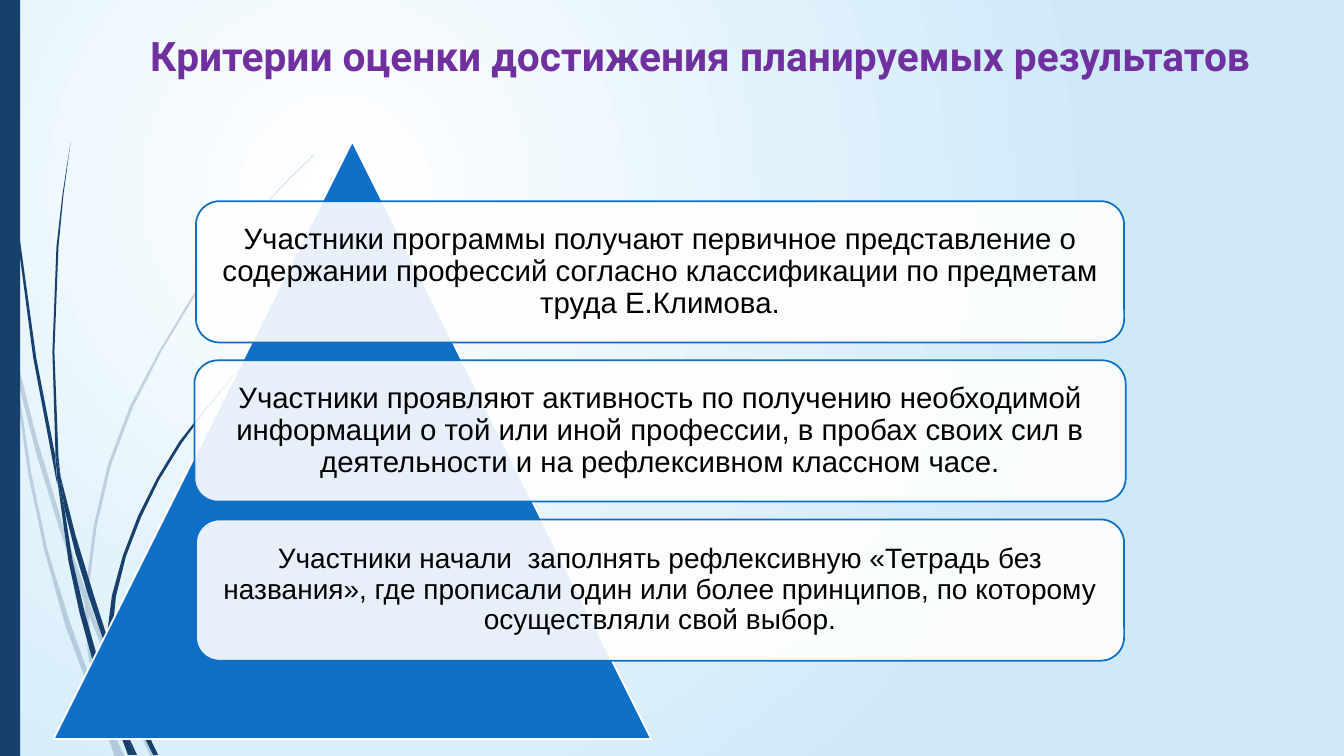
from lxml import etree
from pptx import Presentation
from pptx import util as u
from pptx.dml.color import RGBColor
from pptx.enum import shapes, text
from pptx.oxml.ns import qn

NAVY = RGBColor(0x17, 0x40, 0x6D)
BLUE = RGBColor(0x0F, 0x6F, 0xC6)
PURPLE = RGBColor(0x70, 0x30, 0xA0)
SKY = RGBColor(0xCE, 0xEA, 0xF9)
WHITE = RGBColor(0xFF, 0xFF, 0xFF)
BLACK = RGBColor(0, 0, 0)

TITLE = "Критерии оценки достижения планируемых результатов"
# text, font size, left, width
CARDS = [
    ("Участники программы получают первичное представление о содержании "
     "профессий согласно классификации по предметам труда Е.Климова.",
     21, 4.94, 23.39),
    ("Участники проявляют активность по получению необходимой информации "
     "о той или иной профессии, в пробах своих сил в деятельности "
     "и на рефлексивном классном часе.", 21, 4.9, 23.47),
    ("Участники начали  заполнять рефлексивную «Тетрадь без названия», "
     "где прописали один или более принципов, по которому осуществляли "
     "свой выбор.", 20, 4.94, 23.39),
]
CARD_TOP, CARD_STEP, CARD_HEIGHT = 5.07, 4.01, 3.56

# Outlines of the pieces of grass, corner by corner in GRID units
GRID = u.Cm(0.0254)
PALE_GRASS = [
    [(11, 350), (9, 322), (0, 282), (0, 299), (10, 344)],
    [(58, 522), (84, 599), (85, 586), (62, 520), (36, 433), (14, 345),
     (17, 376), (36, 450)],
    [(92, 607), (88, 596), (88, 610), (123, 694), (150, 751), (155, 751),
     (127, 692)],
    [(119, 751), (124, 751), (105, 711)],
    [(93, 683), (70, 619), (47, 545), (31, 469), (17, 376), (11, 350),
     (28, 470), (44, 546), (65, 621), (92, 693), (101, 714), (99, 707)],
    [(84, 599), (87, 646), (93, 683), (96, 692), (105, 711), (103, 706),
     (91, 646), (88, 610), (88, 608)],
    [(88, 584), (96, 522), (110, 462), (132, 404), (160, 349), (192, 296),
     (229, 245), (268, 198), (290, 175), (312, 154), (312, 153), (289, 175),
     (268, 197), (228, 244), (190, 295), (158, 348), (129, 403), (107, 461),
     (93, 522), (85, 584), (85, 586), (88, 596)],
    [(101, 714), (114, 751), (119, 751)],
    [(88, 608), (88, 610), (88, 596), (85, 586), (84, 599)],
    [(96, 692), (93, 683), (99, 707), (101, 714), (119, 751), (105, 711)],
]
DARK_GRASS = [
    [(7, 110), (17, 233), (33, 355), (56, 477), (57, 481), (55, 457),
     (55, 453), (36, 355), (19, 232), (8, 109), (5, 48), (4, 0), (3, 0),
     (4, 48)],
    [(88, 592), (106, 645), (106, 631), (93, 590), (75, 531), (60, 472),
     (64, 505), (75, 549)],
    [(113, 649), (110, 641), (111, 656), (132, 708), (152, 749), (157, 749),
     (136, 706)],
    [(110, 691), (98, 657), (84, 607), (72, 556), (64, 505), (57, 477),
     (68, 557), (79, 608), (93, 659), (111, 708), (117, 722), (116, 717)],
    [(60, 472), (58, 453), (54, 349), (58, 245), (63, 193), (70, 141),
     (62, 193), (56, 245), (52, 349), (55, 449)],
    [(133, 749), (136, 749), (122, 719)],
    [(57, 477), (64, 505), (60, 472), (55, 449), (55, 453)],
    [(111, 633), (115, 592), (125, 552), (140, 513), (158, 476), (180, 440),
     (205, 406), (231, 374), (245, 359), (261, 344), (260, 344), (245, 358),
     (231, 373), (204, 405), (178, 438), (156, 474), (137, 512), (122, 551),
     (111, 591), (106, 631), (110, 641)],
    [(117, 722), (127, 749), (131, 749)],
    [(106, 645), (110, 691), (116, 706), (122, 719), (121, 716), (114, 687),
     (111, 656), (109, 651)],
    [(106, 645), (109, 651), (111, 656), (110, 641), (106, 631)],
    [(116, 706), (110, 691), (116, 717), (117, 722), (130, 749), (133, 749),
     (122, 719)],
]


def write(sp, content, font="Arial", size=21, color=BLACK, bold=False,
          spacing=1.0, inset=0.0):
    tf = sp.text_frame
    tf.word_wrap = True
    tf.auto_size = text.MSO_AUTO_SIZE.NONE
    tf.vertical_anchor = text.MSO_ANCHOR.MIDDLE
    tf.margin_left = tf.margin_right = u.Cm(inset)
    tf.margin_top = tf.margin_bottom = u.Cm(inset)
    p = tf.paragraphs[0]
    p.alignment = text.PP_ALIGN.CENTER
    p.line_spacing = spacing
    p.space_before = u.Pt(0)
    r = p.add_run()
    r.text = content
    r.font.name, r.font.size, r.font.bold = font, u.Pt(size), bold
    r.font.color.rgb = color


class Deck:
    def __init__(self):
        self.prs = Presentation()
        self.prs.slide_width, self.prs.slide_height = u.Cm(33.87), u.Cm(19.05)
        self.s = self.prs.slides.add_slide(self.prs.slide_layouts[5])

    def background(self, inner, outer):
        """Fill the slide with a circular gradient centred at the upper left."""
        fill = self.s.background.fill
        fill.gradient()
        for stop, color, position in zip(fill.gradient_stops, (inner, outer), (0, 1)):
            stop.color.rgb, stop.position = color, position
        lin = next(self.s.element.iter(qn("a:lin")))
        circle = etree.Element(qn("a:path"), path="circle")
        etree.SubElement(circle, qn("a:fillToRect"),
                         l="50000", t="50000", r="100000", b="100000")
        lin.getparent().replace(lin, circle)

    def title(self, content, left, top, width, height):
        sp = self.s.shapes.title
        sp.left, sp.top = u.Cm(left), u.Cm(top)
        sp.width, sp.height = u.Cm(width), u.Cm(height)
        write(sp, content, font="Roboto", size=29, color=PURPLE, bold=True)

    def paint(self, sp, fill, line=None, opacity=100):
        sp.shadow.inherit = False
        sp.fill.solid()
        sp.fill.fore_color.rgb = fill
        if opacity < 100:
            color = next(sp.element.spPr.iter(qn("a:srgbClr")))
            etree.SubElement(color, qn("a:alpha"), val=str(opacity * 1000))
        if line is None:
            sp.line.fill.background()
        else:
            sp.line.color.rgb, sp.line.width = line, u.Pt(1.25)

    def shape(self, kind, left, top, width, height, **style):
        sp = self.s.shapes.add_shape(kind, u.Cm(left), u.Cm(top),
                                     u.Cm(width), u.Cm(height))
        self.paint(sp, **style)
        return sp

    def outline(self, corners, **style):
        builder = self.s.shapes.build_freeform(*corners[0], scale=GRID)
        builder.add_line_segments(corners[1:], close=True)
        self.paint(builder.convert_to_shape(), **style)


def main():
    deck = Deck()
    kinds = shapes.MSO_SHAPE
    deck.background(WHITE, SKY)
    for grass, opacity in ((PALE_GRASS, 20), (DARK_GRASS, 100)):
        for corners in grass:
            deck.outline(corners, fill=NAVY, opacity=opacity)
    deck.shape(kinds.RECTANGLE, 0, 0, 0.51, 19.05, fill=NAVY)
    deck.title(TITLE, 2.42, 0.58, 30.48, 1.65)
    deck.shape(kinds.ISOSCELES_TRIANGLE, 1.35, 3.56, 15.06, 15.06,
               fill=BLUE, line=WHITE)
    for i, (content, size, left, width) in enumerate(CARDS):
        card = deck.shape(kinds.ROUNDED_RECTANGLE, left, CARD_TOP + i * CARD_STEP,
                          width, CARD_HEIGHT, fill=WHITE, line=BLUE, opacity=90)
        write(card, content, size=size, spacing=0.9, inset=0.22)
    deck.prs.save("out.pptx")


if __name__ == "__main__":
    main()
